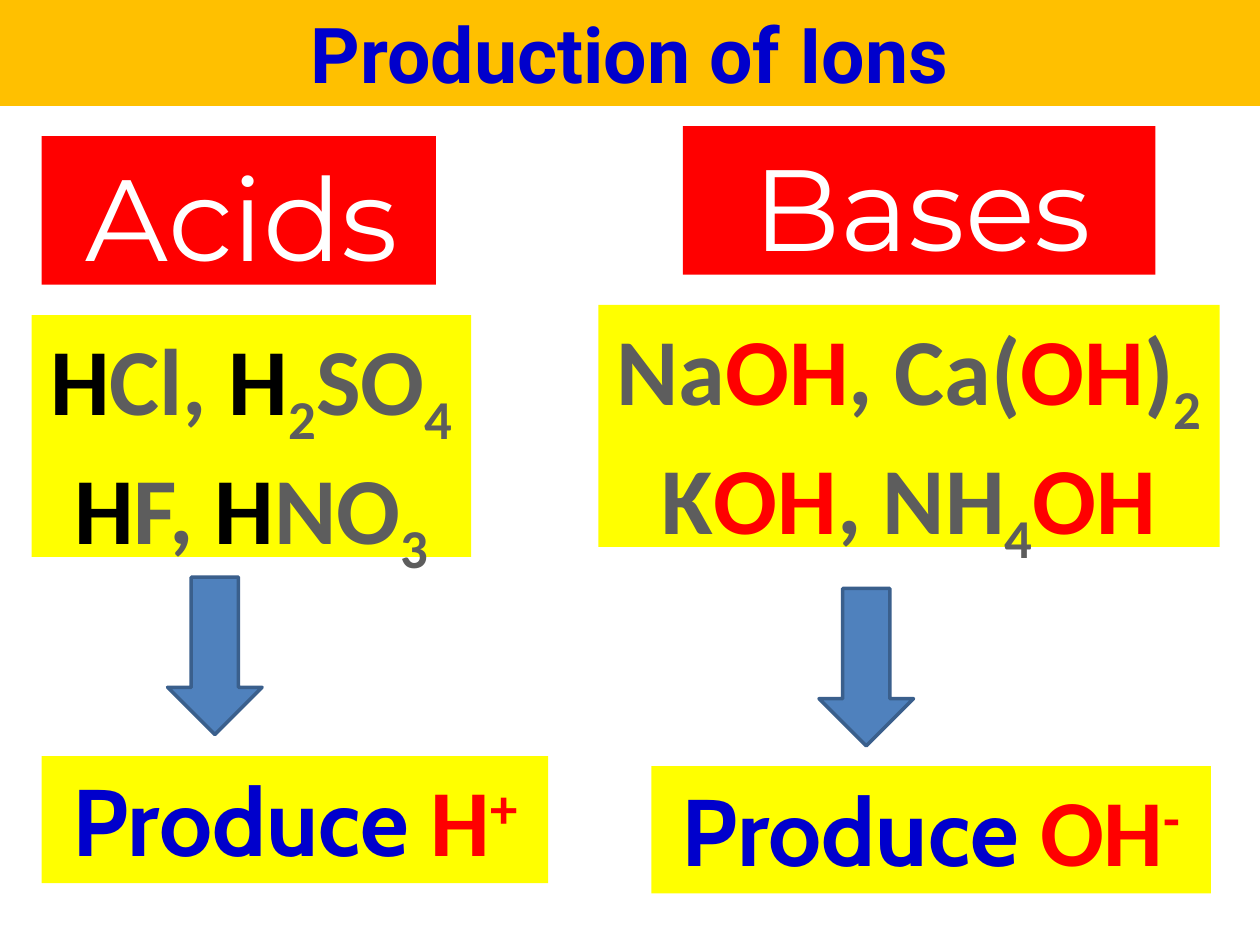
from dataclasses import dataclass
from pptx import Presentation
from pptx.dml.color import RGBColor
from pptx.enum.shapes import MSO_SHAPE
from pptx.enum.text import MSO_ANCHOR, PP_ALIGN
from pptx.util import Inches, Pt


@dataclass(frozen=True)
class Theme:
    amber: str = "FFC000"
    red: str = "FF0000"
    yellow: str = "FFFF00"
    blue: str = "0000CC"
    white: str = "FFFFFF"
    black: str = "000000"
    gray: str = "5D5D5D"
    arrow: str = "4F81BD"
    arrow_line: str = "3A5F8C"
    title_size: int = 44
    heading_size: int = 66
    body_size: int = 54


T = Theme()
SUB, SUP = -25000, 30000

prs = Presentation()
prs.slide_width, prs.slide_height = Inches(10), Inches(7.5)
s = prs.slides.add_slide(prs.slide_layouts[6])


def add_block(kind, box, fill):
    sp = s.shapes.add_shape(kind, *(Inches(v) for v in box))
    sp.shadow.inherit = False
    sp.fill.solid()
    sp.fill.fore_color.rgb = RGBColor.from_string(fill)
    sp.line.fill.background()
    return sp


def add_text(box, fill, lines, size, font, bold=True, wrap=True):
    """Each line is a list of runs: (text, colour, baseline shift, font)."""
    sp = add_block(MSO_SHAPE.RECTANGLE, box, fill)
    tf = sp.text_frame
    tf.word_wrap = wrap
    tf.vertical_anchor = MSO_ANCHOR.TOP
    for i, runs in enumerate(lines):
        p = tf.add_paragraph() if i else tf.paragraphs[0]
        p.alignment = PP_ALIGN.CENTER
        p.font.size, p.font.bold, p.font.name = Pt(size), bold, font
        for text, color, shift, *other_font in runs:
            r = p.add_run()
            r.text = text
            r.font.size, r.font.bold = Pt(size), bold
            r.font.name = other_font[0] if other_font else font
            r.font.color.rgb = RGBColor.from_string(color)
            if shift:
                r.font._element.set("baseline", str(shift))
    return sp


# Title band
add_text((0, 0, 10, 0.84), T.amber, [[("Production of Ions", T.blue, 0)]],
         T.title_size, "Roboto")

# Formulas: the ion-forming part stands out in colour
acids = [
    [("H", T.black, 0), ("Cl, ", T.gray, 0), ("H", T.black, 0),
     ("2", T.gray, SUB), ("SO", T.gray, 0), ("4", T.gray, SUB)],
    [("H", T.black, 0), ("F, ", T.gray, 0), ("H", T.black, 0),
     ("NO", T.gray, 0), ("3", T.gray, SUB)],
]
bases = [
    [("Na", T.gray, 0), ("OH", T.red, 0), (", Ca(", T.gray, 0),
     ("OH", T.red, 0), (")", T.gray, 0), ("2", T.gray, SUB)],
    [("K", T.gray, 0), ("OH", T.red, 0), (", NH", T.gray, 0),
     ("4", T.gray, SUB), ("OH", T.red, 0)],
]

# Columns: heading, formulas, arrow, ion produced
columns = [
    ("Acids", (0.33, 1.08, 3.13, 1.18), acids, (0.25, 2.5, 3.49, 1.92),
     (1.08, 4.83, 1.25, 0.75), " H", "+", (0.33, 6, 4.02, 1.01)),
    ("Bases", (5.42, 1, 3.75, 1.18), bases, (4.75, 2.42, 4.93, 1.92),
     (6.25, 4.92, 1.25, 0.75), " OH", "-", (5.17, 6.08, 4.44, 1.01)),
]
for name, head_box, formulas, formula_box, arrow_box, ion, charge, ion_box in columns:
    heading = add_text(head_box, T.red, [[(name, T.white, 0)]],
                       T.heading_size, "Montserrat", bold=False)
    heading.text_frame.margin_left = Inches(0.15)
    heading.text_frame.margin_top = Inches(0.08)

    add_text(formula_box, T.yellow, formulas, T.body_size, "Calibri", wrap=False)

    arrow = add_block(MSO_SHAPE.RIGHT_ARROW, arrow_box, T.arrow)
    arrow.rotation = 90
    arrow.line.color.rgb = RGBColor.from_string(T.arrow_line)
    arrow.line.width = Pt(2)

    add_text(ion_box, T.yellow,
             [[("Produce", T.blue, 0, "Cabin"), (ion, T.red, 0), (charge, T.red, SUP)]],
             T.body_size, "Calibri", wrap=False)

prs.save("out.pptx")
